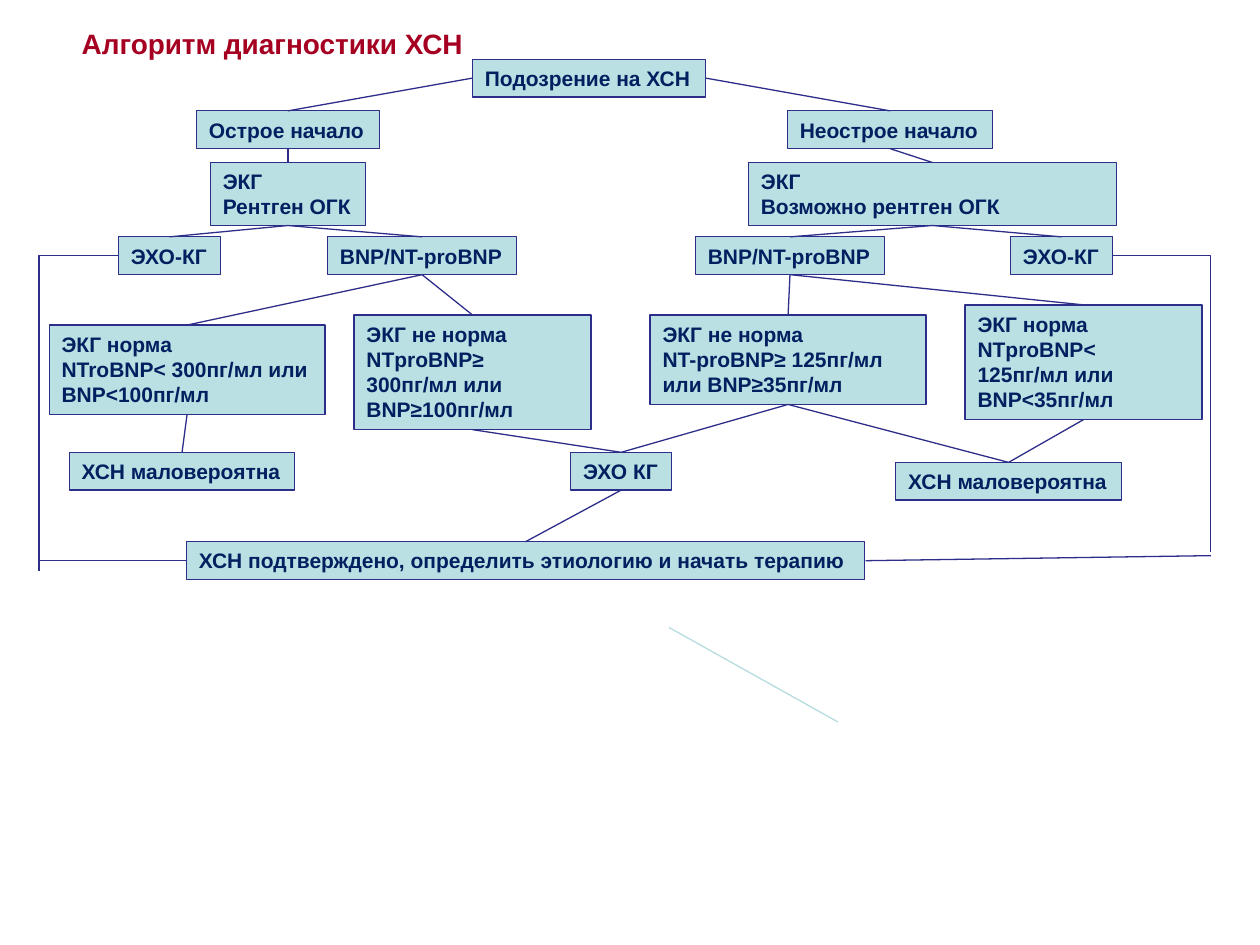
"""Build the slide with the diagnostic algorithm for chronic heart failure."""
from lxml import etree
from pptx import Presentation
from pptx import util as u
from pptx.dml import color
from pptx.enum import shapes, text
from pptx.oxml import ns

COLORS = {"title": "A50021", "label": "002060", "fill": "BBE0E3",
          "line": "2D2D8A", "stray": "B6DCDF"}
TITLE_FONT = {"name": "Arial", "size": u.Pt(16), "bold": True}
LABEL_FONT = {"name": "Arial", "size": u.Pt(12), "bold": True}
TOP, LEFT, BOTTOM, RIGHT = range(4)

deck = Presentation()
deck.slide_width, deck.slide_height = u.Inches(10), u.Inches(7.5)
slide = deck.slides.add_slide(deck.slide_layouts[6])


def write(shape, wording, font_format, ink, wrap):
    frame_format = {"word_wrap": wrap, "vertical_anchor": text.MSO_ANCHOR.TOP,
                    "auto_size": text.MSO_AUTO_SIZE.SHAPE_TO_FIT_TEXT}
    frame = shape.text_frame
    frame.text = wording
    for key, value in frame_format.items():
        setattr(frame, key, value)
    for paragraph in frame.paragraphs:
        paragraph.alignment = text.PP_ALIGN.LEFT
        for key, value in font_format.items():
            setattr(paragraph.font, key, value)
        paragraph.font.color.rgb = color.RGBColor.from_string(COLORS[ink])


def connect(start, end, ink="line", kind=shapes.MSO_CONNECTOR.STRAIGHT):
    link = slide.shapes.add_connector(kind, *map(u.Inches, start + end))
    link.line.width = u.Pt(0.75)
    link.line.color.rgb = color.RGBColor.from_string(COLORS[ink])
    etree.SubElement(link._element.spPr, ns.qn("a:effectLst"))
    return link


title = slide.shapes.add_textbox(*map(u.Inches, (0.55, 0.16, 3.26, 0.37)))
write(title, "Алгоритм диагностики ХСН", TITLE_FONT, "title", False)

STEPS = {
    "suspicion": (3.75, 0.47, 1.85, 0.3, False, "Подозрение на ХСН"),
    "gradual": (6.25, 0.88, 1.63, 0.3, False, "Неострое начало"),
    "acute": (1.56, 0.88, 1.45, 0.3, False, "Острое начало"),
    "gradual_ecg": (5.94, 1.29, 2.92, 0.5, True, "ЭКГ\nВозможно рентген ОГК"),
    "acute_ecg": (1.67, 1.29, 1.23, 0.5, False, "ЭКГ\nРентген ОГК"),
    "acute_bnp": (2.6, 1.88, 1.5, 0.3, False, "BNP/NT-proBNP"),
    "acute_echo": (0.94, 1.88, 0.81, 0.3, False, "ЭХО-КГ"),
    "gradual_normal": (7.66, 2.42, 1.88, 0.91, True,
                       "ЭКГ норма\nNTproBNP< 125пг/мл или BNP<35пг/мл"),
    "gradual_abnormal": (5.16, 2.5, 2.19, 0.71, True,
                         "ЭКГ не норма\nNT-proBNP≥ 125пг/мл или BNP≥35пг/мл"),
    "acute_abnormal": (2.81, 2.5, 1.88, 0.91, True,
                       "ЭКГ не норма\nNTproBNP≥ 300пг/мл или BNP≥100пг/мл"),
    "acute_normal": (0.39, 2.58, 2.19, 0.71, True,
                     "ЭКГ норма\nNTroBNP< 300пг/мл или BNP<100пг/мл"),
    "gradual_unlikely": (7.11, 3.67, 1.79, 0.3, False, "ХСН маловероятна"),
    "echo": (4.53, 3.59, 0.8, 0.3, False, "ЭХО КГ"),
    "acute_unlikely": (0.55, 3.59, 1.79, 0.3, False, "ХСН маловероятна"),
    "confirmed": (1.48, 4.3, 5.38, 0.3, True,
                  "ХСН подтверждено, определить этиологию и начать терапию"),
    "gradual_echo": (8.02, 1.88, 0.81, 0.3, False, "ЭХО-КГ"),
    "gradual_bnp": (5.52, 1.88, 1.5, 0.3, False, "BNP/NT-proBNP"),
}
steps = {}
for step, (left, top, width, height, wrap, wording) in STEPS.items():
    box = slide.shapes.add_shape(shapes.MSO_SHAPE.RECTANGLE,
                                 *map(u.Inches, (left, top, width, height)))
    box.shadow.inherit = False
    box.fill.solid()
    box.fill.fore_color.rgb = color.RGBColor.from_string(COLORS["fill"])
    box.line.color.rgb = color.RGBColor.from_string(COLORS["line"])
    box.line.width = u.Pt(0.75)
    write(box, wording, LABEL_FONT, "label", wrap)
    steps[step] = box

BRANCHES = [
    ("suspicion", LEFT, "acute"), ("suspicion", RIGHT, "gradual"),
    ("acute", BOTTOM, "acute_ecg"), ("gradual", BOTTOM, "gradual_ecg"),
    ("acute_ecg", BOTTOM, "acute_echo"), ("acute_ecg", BOTTOM, "acute_bnp"),
    ("gradual_ecg", BOTTOM, "gradual_bnp"), ("gradual_ecg", BOTTOM, "gradual_echo"),
    ("acute_bnp", BOTTOM, "acute_normal"), ("acute_bnp", BOTTOM, "acute_abnormal"),
    ("gradual_bnp", BOTTOM, "gradual_abnormal"), ("gradual_bnp", BOTTOM, "gradual_normal"),
    ("acute_normal", BOTTOM, "acute_unlikely"), ("acute_abnormal", BOTTOM, "echo"),
    ("gradual_abnormal", BOTTOM, "echo"), ("gradual_abnormal", BOTTOM, "gradual_unlikely"),
    ("gradual_normal", BOTTOM, "gradual_unlikely"), ("echo", BOTTOM, "confirmed"),
]
for origin, side, target in BRANCHES:
    branch = connect((0, 0), (1, 1))
    branch.begin_connect(steps[origin], side)
    branch.end_connect(steps[target], TOP)

for start, end in [((0.94, 2.03), (0.31, 4.53)), ((8.83, 2.03), (9.61, 4.38))]:
    bypass = connect(start, end, kind=shapes.MSO_CONNECTOR.ELBOW)
    bypass._element.spPr.find(ns.qn("a:prstGeom")).set("prst", "bentConnector2")

connect((0.31, 4.45), (1.48, 4.45))
connect((6.87, 4.45), (9.61, 4.41))
connect((5.31, 4.98), (6.65, 5.73), "stray")

deck.save("out.pptx")
